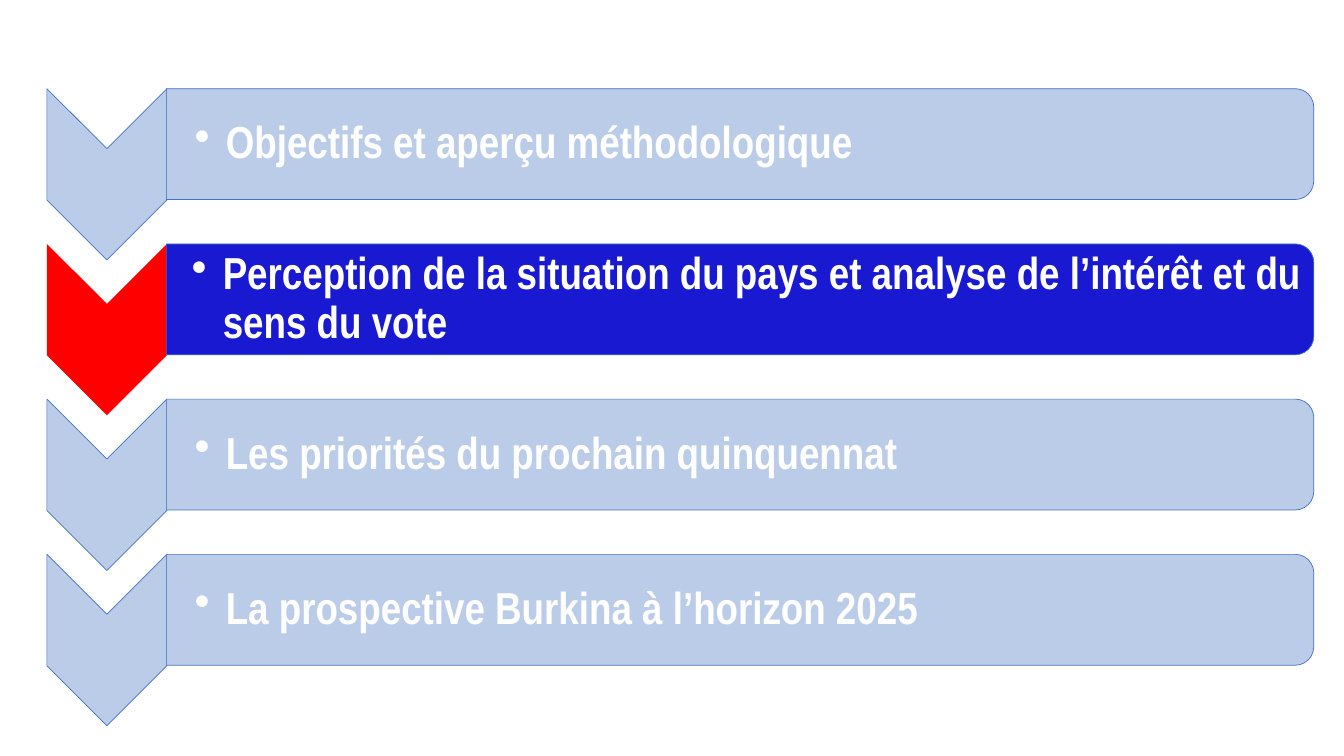
import pptx
import pptx.util
import pptx.dml.color
import pptx.enum.shapes
import pptx.enum.text
import pptx.oxml.ns
import lxml.etree
from dataclasses import dataclass

Inches = pptx.util.Inches
Pt = pptx.util.Pt
Kind = pptx.enum.shapes.MSO_SHAPE


@dataclass(frozen=True)
class Theme:
    pale: str = "B4C7E7"
    deep: str = "0000CC"
    red: str = "FF0000"
    edge: str = "4472C4"
    white: str = "FFFFFF"
    font: str = "Arial Narrow"
    size: float = 32
    rule: float = 0.5
    alpha: int = 90


def color(code):
    return pptx.dml.color.RGBColor.from_string(code)


def write(frame, text, *, font, size, tint, bold=True, indent=0.31, inset=0.28, pad=0.03):
    """Fill a text frame with one bulleted paragraph."""
    frame.word_wrap = True
    frame.vertical_anchor = pptx.enum.text.MSO_ANCHOR.MIDDLE
    frame.margin_left = Inches(inset)
    frame.margin_top = frame.margin_right = frame.margin_bottom = Inches(pad)
    para = frame.paragraphs[0]
    para.level = 1
    para.line_spacing = 0.9
    run = para.add_run()
    run.text = text
    run.font.name = font
    run.font.size = Pt(size)
    run.font.bold = bold
    run.font.color.rgb = color(tint)
    # Bullet with a hanging indent
    props = para._p.get_or_add_pPr()
    props.set("marL", str(Inches(indent)))
    props.set("indent", str(-Inches(indent)))
    mark = lxml.etree.SubElement(props, pptx.oxml.ns.qn("a:buChar"))
    mark.set("char", "•")


class Deck:
    def __init__(self, theme):
        self.theme = theme
        self.file = pptx.Presentation()
        self.file.slide_width = Inches(13.33)
        self.file.slide_height = Inches(7.5)
        self.slide = self.file.slides.add_slide(self.file.slide_layouts[6])

    def turned(self, kind, mid, size, fill, edge=True):
        """Add a shape turned by 90 degrees about its middle point."""
        (x, y), (wide, high) = mid, size
        shape = self.slide.shapes.add_shape(
            kind, Inches(x - wide / 2), Inches(y - high / 2), Inches(wide), Inches(high))
        shape.rotation = 90
        shape.shadow.inherit = False
        shape.fill.solid()
        shape.fill.fore_color.rgb = color(fill)
        if edge:
            shape.line.color.rgb = color(self.theme.edge)
            shape.line.width = Pt(self.theme.rule)
            self.fade(shape)
        else:
            shape.line.fill.background()
        return shape

    def fade(self, shape):
        tone = shape._element.spPr.find(
            pptx.oxml.ns.qn("a:solidFill") + "/" + pptx.oxml.ns.qn("a:srgbClr"))
        alpha = lxml.etree.SubElement(tone, pptx.oxml.ns.qn("a:alpha"))
        alpha.set("val", str(self.theme.alpha * 1000))

    def label(self, text, left, top, wide, high, **style):
        box = self.slide.shapes.add_textbox(
            Inches(left), Inches(top), Inches(wide), Inches(high))
        write(box.text_frame, text, font=self.theme.font, size=self.theme.size,
              tint=self.theme.white, **style)

    def step(self, text, mid, active):
        """Add one agenda row: chevron, bar and label."""
        theme = self.theme
        self.turned(Kind.CHEVRON, (1.06, mid + 0.3), (1.7, 1.19),
                    theme.red if active else theme.pale, edge=not active)
        self.turned(Kind.ROUND_2_SAME_RECTANGLE, (7.34, mid), (1.1, 11.38),
                    theme.deep if active else theme.pale)
        style = {"inset": 0.25, "pad": 0.02} if active else {}
        self.label(text, 1.65, mid - 0.5, 11.33, 1, **style)


def main():
    deck = Deck(Theme())

    # Agenda rows, with the current one lit
    steps = [
        "Objectifs et aperçu méthodologique",
        "Perception de la situation du pays et analyse de l’intérêt et du sens du vote",
        "Les priorités du prochain quinquennat",
        "La prospective Burkina à l’horizon 2025",
    ]
    first, pitch, current = 1.43, 1.54, 1
    for row, text in enumerate(steps):
        deck.step(text, first + row * pitch, row == current)

    deck.file.save("out.pptx")


if __name__ == "__main__":
    main()
